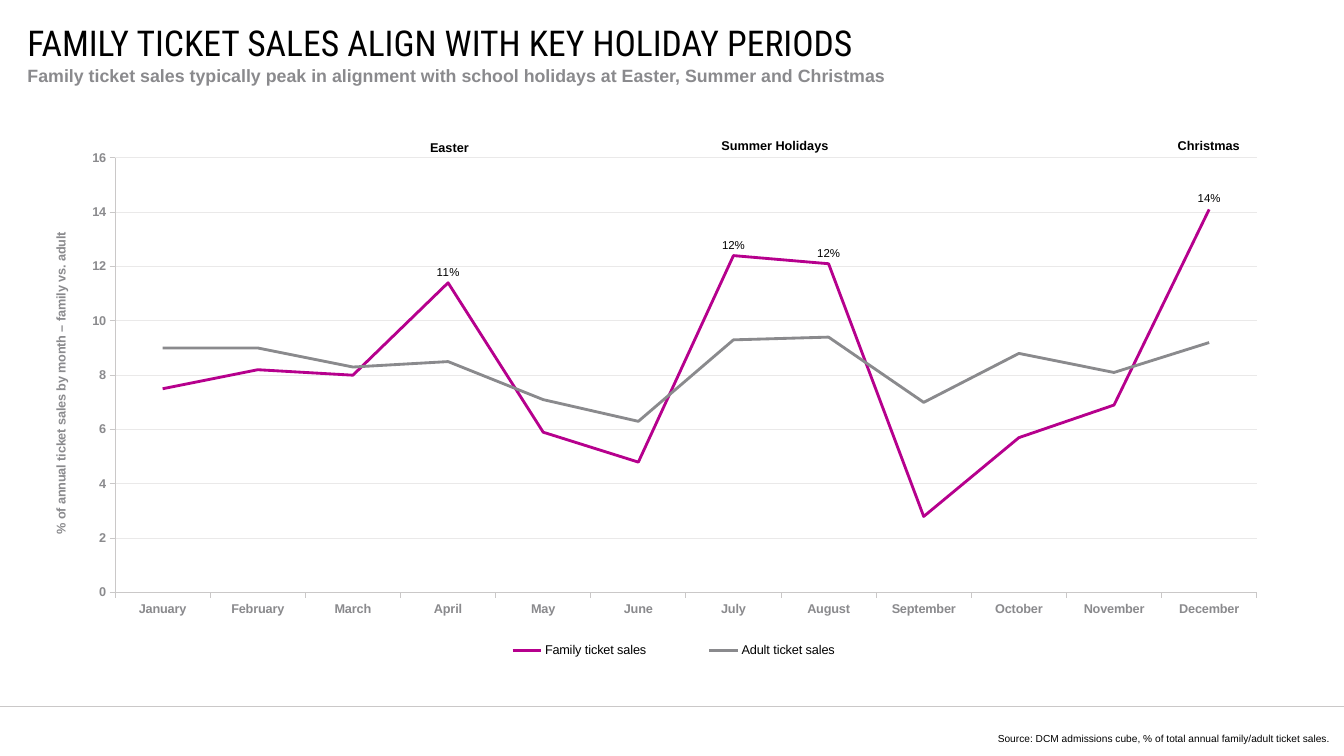
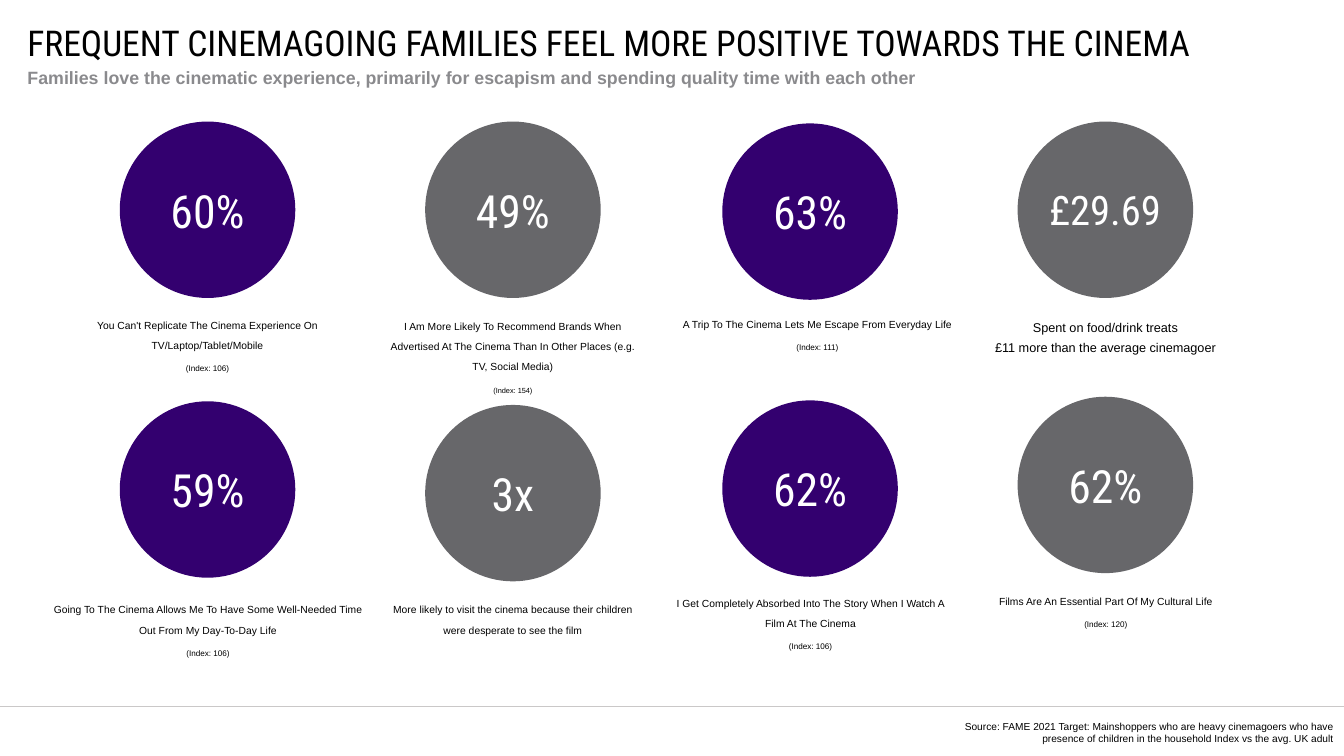
from dataclasses import dataclass, field, replace

from lxml import etree
from pptx import Presentation
from pptx import util as u
from pptx.chart import data as chart_data
from pptx.dml.color import RGBColor
from pptx.enum import chart as chart_enum
from pptx.enum import shapes, text
from pptx.oxml.ns import qn

PX = 9144
LEFT, CENTER, RIGHT = text.PP_ALIGN.LEFT, text.PP_ALIGN.CENTER, text.PP_ALIGN.RIGHT
TOP, MIDDLE = text.MSO_ANCHOR.TOP, text.MSO_ANCHOR.MIDDLE


@dataclass(frozen=True)
class Style:
    size: int
    color: str = "000000"
    name: str = "Arial"
    bold: bool = False
    align: object = LEFT
    anchor: object = TOP
    leading: int = 0
    baseline: int = 0
    inset: tuple = (0, 0)
    wrap: bool = True
    grow: bool = False


@dataclass(frozen=True)
class Theme:
    magenta: str = "B6008D"
    purple: str = "33006F"
    dark_gray: str = "67676A"
    gray: str = "8A8A8D"
    rule: str = "CAC8C8"
    grid: str = "EAE9E9"
    title: Style = Style(28, name="Roboto Condensed", anchor=MIDDLE, wrap=False)
    subtitle: Style = Style(14, "8A8A8D", bold=True)
    source: Style = Style(8, align=RIGHT, anchor=MIDDLE, grow=True)
    event: Style = Style(10, bold=True, align=CENTER, inset=(10, 5), grow=True)
    figure: Style = Style(36, "FFFFFF", "Roboto Condensed", align=CENTER, anchor=MIDDLE)
    caption: Style = Style(14, align=CENTER, leading=16, baseline=30000, inset=(10, 5))
    note: Style = Style(10, align=CENTER, leading=16, inset=(10, 5))
    axis: Style = Style(10, "8A8A8D", bold=True)
    legend: Style = Style(10)
    point: Style = Style(9)


THEME = Theme()


@dataclass(frozen=True)
class Stat:
    column: int
    top: int
    value: str
    caption_top: int
    caption_width: int
    lines: tuple
    index_size: int = 11
    shift: int = 0
    figure: Style = field(default=THEME.figure)
    style: Style = field(default=THEME.caption)


COLUMN_CENTERS = (227, 561, 886, 1209)
CIRCLE_WIDTH, CIRCLE_HEIGHT = 192, 193
STATS = (
    Stat(0, 133, "60%", 343, 276,
         ("You Can't Replicate The Cinema Experience On TV/Laptop/Tablet/Mobile", "(Index: 106)")),
    Stat(1, 133, "49%", 344, 306,
         ("I Am More Likely To Recommend Brands When Advertised At The Cinema "
          "Than In Other Places (e.g. TV, Social Media)", "(Index: 154)"), index_size=10),
    Stat(2, 135, "63%", 342, 318,
         ("A Trip To The Cinema Lets Me Escape From Everyday Life", "(Index: 111)"), shift=8),
    Stat(3, 133, "£29.69", 339, 306,
         ("Spent on food/drink treats", "£11 more than the average cinemagoer"),
         index_size=10, figure=replace(THEME.figure, size=32), style=THEME.note),
    Stat(0, 439, "59%", 654, 371,
         ("Going To The Cinema Allows Me To Have Some Well-Needed Time Out From My Day-To-Day Life",
          "(Index: 106)")),
    Stat(1, 443, "3x", 654, 306,
         ("More likely to visit the cinema because their children were desperate to see the film",)),
    Stat(2, 438, "62%", 647, 329,
         ("I Get Completely Absorbed Into The Story When I Watch A Film At The Cinema",
          "(Index: 106)")),
    Stat(3, 434, "62%", 645, 329,
         ("Films Are An Essential Part Of My Cultural Life", "(Index: 120)")),
)

MONTHS = ("January", "February", "March", "April", "May", "June", "July",
          "August", "September", "October", "November", "December")
SALES = (
    ("Family ticket sales", THEME.magenta,
     (7.5, 8.2, 8, 11.4, 5.9, 4.8, 12.4, 12.1, 2.8, 5.7, 6.9, 14.1)),
    ("Adult ticket sales", THEME.gray,
     (9, 9, 8.3, 8.5, 7.1, 6.3, 9.3, 9.4, 7, 8.8, 8.1, 9.2)),
)
PEAKS = {3: "11%", 6: "12%", 7: "12%", 11: "14%"}
EVENTS = (
    ("Easter", (456, 148, 71, 27)),
    ("Summer Holidays", (767, 146, 161, 27)),
    ("Christmas", (1270, 146, 104, 28)),
)


def px(*lengths):
    return [u.Emu(length * PX) for length in lengths]


def set_format(target, values):
    for name, value in values.items():
        setattr(target, name, value)


def set_font(font, style):
    set_format(font, {"size": u.Pt(style.size), "name": style.name, "bold": style.bold})
    font.color.rgb = RGBColor.from_string(style.color)


def set_line(line, color, width):
    line.color.rgb = RGBColor.from_string(color)
    line.width = u.Pt(width)


def write(shape, style, *lines):
    frame = shape.text_frame
    side, edge = px(*style.inset)
    set_format(frame, {
        "margin_left": side, "margin_right": side, "margin_top": edge, "margin_bottom": edge,
        "vertical_anchor": style.anchor, "word_wrap": style.wrap,
        "auto_size": text.MSO_AUTO_SIZE.SHAPE_TO_FIT_TEXT if style.grow
        else text.MSO_AUTO_SIZE.NONE,
    })
    for number, (content, size) in enumerate(lines):
        paragraph = frame.add_paragraph() if number else frame.paragraphs[0]
        paragraph.alignment = style.align
        if style.leading:
            paragraph.line_spacing = u.Pt(style.leading)
        run = paragraph.add_run()
        run.text = content
        set_font(run.font, replace(style, size=size))
        if style.baseline:
            run._r.get_or_add_rPr().set("baseline", str(style.baseline))


def add_text(slide, box, style, content):
    write(slide.shapes.add_textbox(*px(*box)), style, (content, style.size))


def add_rule(slide):
    rule = slide.shapes.add_connector(shapes.MSO_CONNECTOR.STRAIGHT, *px(0, 773, 1470, 773))
    set_line(rule.line, THEME.rule, 0.5)
    etree.SubElement(rule._element.spPr, qn("a:effectLst"))


def add_page(presentation, title, subtitle, subtitle_style, source, source_box):
    slide = presentation.slides.add_slide(presentation.slide_layouts[6])
    add_rule(slide)
    add_text(slide, (30, 30, 1358, 32), THEME.title, title)
    add_text(slide, (30, 73, 1358, 48), subtitle_style, subtitle)
    add_text(slide, source_box, *source)
    return slide


def set_layout(parent, index, values, inner=False):
    for old in parent.findall(qn("c:layout")):
        parent.remove(old)
    layout = etree.Element(qn("c:layout"))
    manual = etree.SubElement(layout, qn("c:manualLayout"))
    settings = {"layoutTarget": "inner"} if inner else {}
    settings |= {"xMode": "edge", "yMode": "edge"} | dict(zip("xywh", values))
    for name, value in settings.items():
        etree.SubElement(manual, qn(f"c:{name}")).set("val", str(value))
    parent.insert(index, layout)


def format_axes(chart):
    for axis in (chart.category_axis, chart.value_axis):
        set_format(axis, {"major_tick_mark": chart_enum.XL_TICK_MARK.OUTSIDE,
                          "minor_tick_mark": chart_enum.XL_TICK_MARK.NONE})
        set_font(axis.tick_labels.font, THEME.axis)
        set_line(axis.format.line, THEME.rule, 0.75)
    values = chart.value_axis
    set_format(values, {"minimum_scale": 0, "maximum_scale": 16, "major_unit": 2,
                        "has_major_gridlines": True})
    set_format(values.tick_labels, {"number_format": "0", "number_format_is_linked": False})
    set_line(values.major_gridlines.format.line, THEME.grid, 0.75)
    run = values.axis_title.text_frame.paragraphs[0].add_run()
    run.text = "% of annual ticket sales by month – family vs. adult"
    set_font(run.font, THEME.axis)


def label_peaks(series):
    series.data_labels.show_value = False
    for index, content in PEAKS.items():
        label = series.points[index].data_label
        run = label.text_frame.paragraphs[0].add_run()
        run.text = content
        set_font(run.font, THEME.point)
        label.position = chart_enum.XL_LABEL_POSITION.ABOVE


def add_sales_chart(slide):
    sales = chart_data.CategoryChartData(number_format="0")
    sales.categories = MONTHS
    for name, _, values in SALES:
        sales.add_series(name, values)
    chart = slide.shapes.add_chart(
        chart_enum.XL_CHART_TYPE.LINE, *px(55, 159, 1337, 567), sales).chart
    set_font(chart.font, THEME.legend)
    set_format(chart, {"has_title": False, "has_legend": True})
    set_format(chart.legend, {"position": chart_enum.XL_LEGEND_POSITION.BOTTOM,
                              "include_in_layout": False})
    set_font(chart.legend.font, THEME.legend)
    format_axes(chart)
    plot = chart.plots[0]
    plot.vary_by_categories = False
    for series, (_, color, _) in zip(plot.series, SALES):
        series.smooth = False
        set_line(series.format.line, color, 2.25)
    label_peaks(plot.series[0])
    plot_area = chart._chartSpace.find(".//" + qn("c:plotArea"))
    set_layout(plot_area, 0, (0.053, 0.024, 0.934, 0.839), inner=True)
    set_layout(chart.legend._element, 1, (0.33, 0.95, 0.36, 0.05))


def add_stat(slide, stat):
    center = COLUMN_CENTERS[stat.column]
    circle = slide.shapes.add_shape(
        shapes.MSO_SHAPE.OVAL,
        *px(center - CIRCLE_WIDTH // 2, stat.top, CIRCLE_WIDTH, CIRCLE_HEIGHT))
    circle.shadow.inherit = False
    circle.fill.solid()
    circle.fill.fore_color.rgb = RGBColor.from_string(
        THEME.dark_gray if stat.column % 2 else THEME.purple)
    circle.line.fill.background()
    write(circle, stat.figure, (stat.value, stat.figure.size))
    left = center + stat.shift - stat.caption_width // 2
    caption = slide.shapes.add_textbox(*px(left, stat.caption_top, stat.caption_width, 96))
    write(caption, stat.style, *zip(stat.lines, (stat.style.size, stat.index_size)))


def add_sales_slide(presentation):
    slide = add_page(
        presentation, "FAMILY TICKET SALES ALIGN WITH KEY HOLIDAY PERIODS",
        "Family ticket sales typically peak in alignment with school holidays "
        "at Easter, Summer and Christmas", replace(THEME.subtitle, leading=15),
        (replace(THEME.source, leading=19),
         "Source: DCM admissions cube, % of total annual family/adult ticket sales."),
        (999, 795, 456, 13))
    add_sales_chart(slide)
    for name, box in EVENTS:
        add_text(slide, box, THEME.event, name)


def add_attitudes_slide(presentation):
    slide = add_page(
        presentation, "FREQUENT CINEMAGOING FAMILIES FEEL MORE POSITIVE TOWARDS THE CINEMA",
        "Families love the cinematic experience, primarily for escapism "
        "and spending quality time with each other", THEME.subtitle,
        (THEME.source,
         "Source: FAME 2021 Target: Mainshoppers who are heavy cinemagoers who have "
         "presence of children in the household Index vs the avg. UK adult"),
        (1017, 781, 442, 40))
    for stat in STATS:
        add_stat(slide, stat)


def main():
    presentation = Presentation()
    presentation.slide_width, presentation.slide_height = px(1470, 827)
    add_sales_slide(presentation)
    add_attitudes_slide(presentation)
    presentation.save("out.pptx")


if __name__ == "__main__":
    main()
